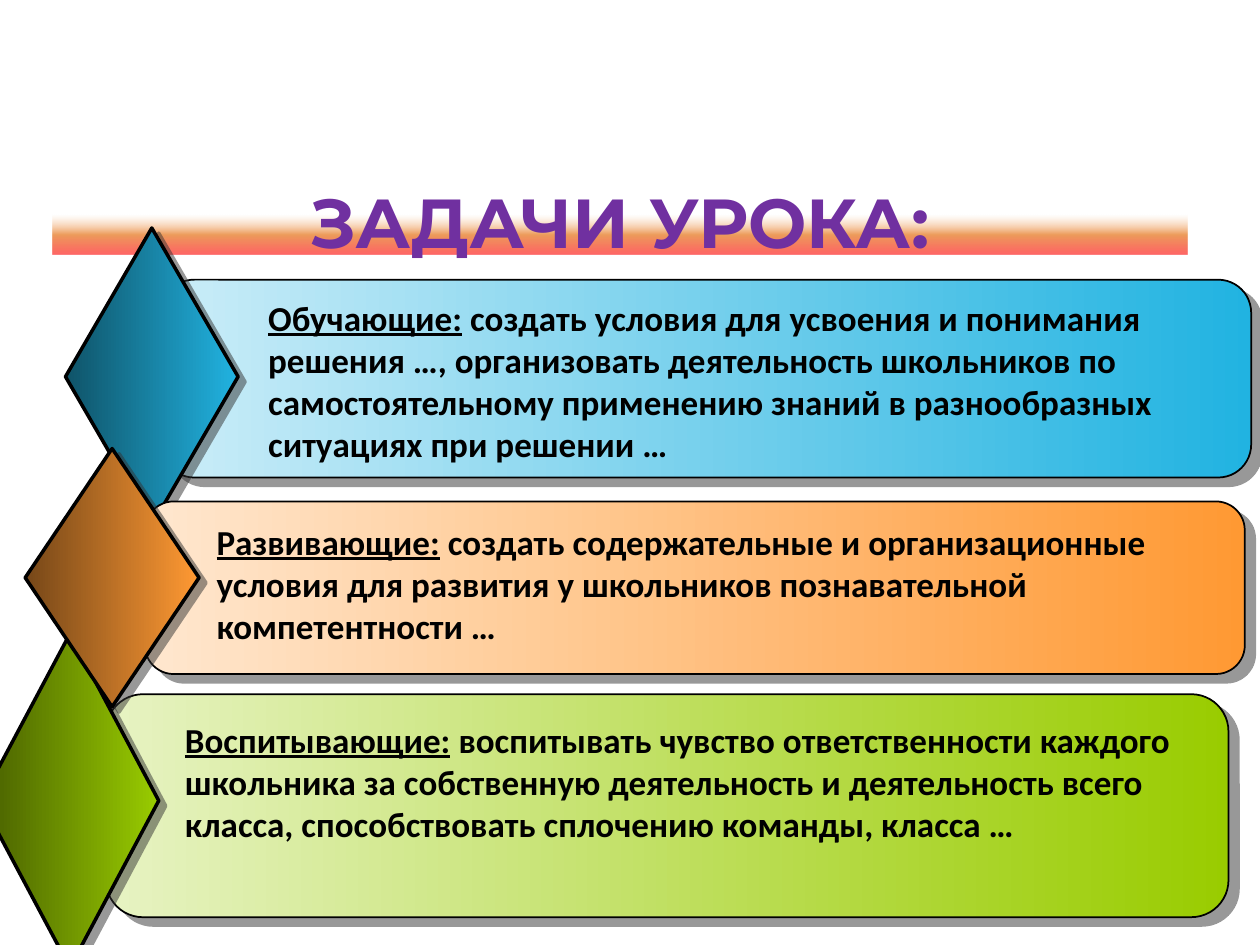
from lxml import etree
from pptx import Presentation
from pptx.dml.color import RGBColor
from pptx.enum.shapes import MSO_SHAPE
from pptx.enum.text import MSO_ANCHOR, MSO_AUTO_SIZE, PP_ALIGN
from pptx.oxml.ns import qn
from pptx.util import Inches, Pt

BLACK = RGBColor(0x00, 0x00, 0x00)
PURPLE = RGBColor(0x70, 0x30, 0xA0)
SHADOW = RGBColor(0x33, 0x33, 0x33)
BLUE = RGBColor(0x21, 0xB3, 0xE1)
GREEN = RGBColor(0x99, 0xCC, 0x00)
ORANGE = RGBColor(0xFF, 0x99, 0x33)

TITLE = "ЗАДАЧИ УРОКА:"
TITLE_BOX = (0.42, 1.49, 9, 0.53)
# Position %, colour, opacity %
TITLE_STOPS = [
    (0, RGBColor(0xFD, 0xEA, 0xDA), 0),
    (40, RGBColor(0xFA, 0xC0, 0x90), 0),
    (70, RGBColor(0xE4, 0x6C, 0x0A), 67),
    (100, RGBColor(0xFF, 0x00, 0x00), 60),
]

# Tasks from back to front; boxes are left, top, width, height in inches
TASKS = [
    dict(heading="Обучающие:",
         body=" создать условия для усвоения и понимания решения …, "
              "организовать деятельность школьников по самостоятельному "
              "применению знаний в разнообразных ситуациях при решении …",
         colour=BLUE, bar=(1.28, 2.22, 8.65, 1.57),
         diamond=(0.52, 1.81, 1.37, 2.36), text=(2.03, 2.3, 7.79, 1.45)),
    dict(heading="Воспитывающие:",
         body=" воспитывать чувство ответственности каждого школьника за "
              "собственную деятельность и деятельность всего класса, "
              "способствовать сплочению команды, класса …",
         colour=GREEN, bar=(0.84, 5.51, 8.91, 1.77),
         diamond=(-0.15, 5.03, 1.41, 2.65), text=(1.37, 5.65, 8.04, 1.5)),
    dict(heading="Развивающие:",
         body=" создать содержательные и организационные условия для "
              "развития у школьников познавательной компетентности …",
         colour=ORANGE, bar=(1.15, 3.98, 8.73, 1.37),
         diamond=(0.2, 3.56, 1.38, 2.05), text=(1.62, 4.08, 7.79, 1.11)),
]
TINT, SHADE = 0.235, 0.463


def inches(box):
    return [Inches(value) for value in box]


def tinted(colour):
    return RGBColor(*(round(255 - (255 - part) * TINT) for part in colour))


def shaded(colour):
    return RGBColor(*(round(part * SHADE) for part in colour))


def add_colour(parent, colour, opacity):
    node = etree.SubElement(parent, qn("a:srgbClr"), val=str(colour))
    if opacity < 100:
        etree.SubElement(node, qn("a:alpha"), val=str(opacity * 1000))


def set_gradient(shape, stops, angle=0):
    shape.fill.gradient()
    shape.fill.gradient_angle = angle
    stop_list = shape._element.spPr.find(".//" + qn("a:gsLst"))
    for old in list(stop_list):
        stop_list.remove(old)
    for position, colour, opacity in stops:
        stop = etree.SubElement(stop_list, qn("a:gs"), pos=str(position * 1000))
        add_colour(stop, colour, opacity)


def add_panel(slide, kind, box, start, end, line_width, distance, direction):
    panel = slide.shapes.add_shape(kind, *inches(box))
    set_gradient(panel, [(0, start, 100), (100, end, 100)])
    panel.line.color.rgb = BLACK
    panel.line.width = Pt(line_width)
    panel.shadow.inherit = False
    effects = panel._element.spPr.find(qn("a:effectLst"))
    shadow = etree.SubElement(
        effects, qn("a:outerShdw"), blurRad="0", dist=str(Pt(distance)),
        dir=str(direction * 60000), algn="ctr", rotWithShape="0")
    add_colour(shadow, SHADOW, 50)


def add_task(slide, task):
    colour = task["colour"]
    add_panel(slide, MSO_SHAPE.ROUNDED_RECTANGLE, task["bar"],
              tinted(colour), colour, 1, 7.8, 40)
    add_panel(slide, MSO_SHAPE.DIAMOND, task["diamond"],
              shaded(colour), colour, 2, 5, 37)
    frame = slide.shapes.add_textbox(*inches(task["text"])).text_frame
    frame.word_wrap = True
    frame.auto_size = MSO_AUTO_SIZE.SHAPE_TO_FIT_TEXT
    paragraph = frame.paragraphs[0]
    font = paragraph.font
    font.name, font.size, font.bold = "Calibri", Pt(20), True
    font.color.rgb = BLACK
    heading = paragraph.add_run()
    heading.text = task["heading"]
    heading.font.underline = True
    paragraph.add_run().text = task["body"]


def main():
    deck = Presentation()
    deck.slide_width, deck.slide_height = Inches(10), Inches(7.5)
    slide = deck.slides.add_slide(deck.slide_layouts[5])

    # Title on a fading band
    title = slide.shapes.title
    title.left, title.top, title.width, title.height = inches(TITLE_BOX)
    set_gradient(title, TITLE_STOPS, 270)
    frame = title.text_frame
    frame.text = TITLE
    frame.auto_size = MSO_AUTO_SIZE.NONE
    frame.vertical_anchor = MSO_ANCHOR.MIDDLE
    heading = frame.paragraphs[0]
    heading.alignment = PP_ALIGN.CENTER
    font = heading.font
    font.name, font.size, font.bold = "Montserrat", Pt(39.6), True
    font.color.rgb = PURPLE

    # Task bars with diamonds
    for task in TASKS:
        add_task(slide, task)

    deck.save("out.pptx")


if __name__ == "__main__":
    main()
